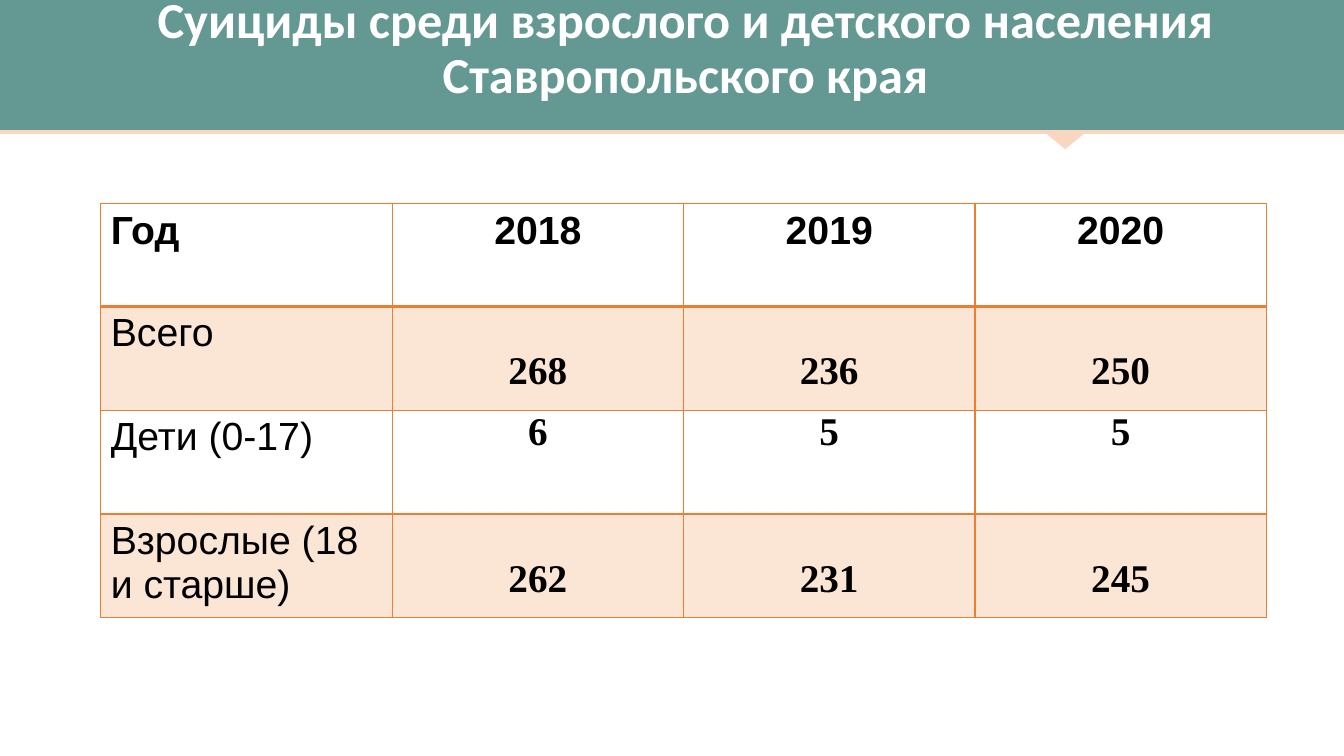
from dataclasses import dataclass

from lxml.etree import SubElement
from pptx import Presentation
from pptx.dml.color import RGBColor
from pptx.enum.shapes import MSO_CONNECTOR, MSO_SHAPE
from pptx.enum.text import MSO_ANCHOR, MSO_AUTO_SIZE, PP_ALIGN
from pptx.oxml import parse_xml
from pptx.oxml.ns import nsdecls, qn
from pptx.util import Inches, Pt


@dataclass(frozen=True)
class Theme:
    teal: str = "649892"
    peach: str = "F8D6BF"
    orange: str = "ED7D31"
    white: str = "FFFFFF"
    black: str = "000000"
    title_size: int = 36
    table_size: int = 28


theme = Theme()


def set_font(paragraph, name, size, color, bold):
    font = paragraph.font
    font.name, font.size, font.bold = name, Pt(size), bold
    font.color.rgb = RGBColor.from_string(color)


def set_borders(cell, widths):
    """Draw the left, right, top and bottom edges, with widths in points."""
    properties = cell._tc.get_or_add_tcPr()
    for position, (side, width) in enumerate(zip("LRTB", widths)):
        properties.insert(position, parse_xml(
            f'<a:ln{side} {nsdecls("a")} w="{Pt(width)}"><a:solidFill>'
            f'<a:srgbClr val="{theme.orange}"/></a:solidFill></a:ln{side}>'))


prs = Presentation()
prs.slide_width, prs.slide_height = Inches(13.33), Inches(7.5)
slide = prs.slides.add_slide(prs.slide_layouts[5])

# Header band with its rule and pointer
band = slide.shapes.add_shape(MSO_SHAPE.RECTANGLE, 0, 0, Inches(13.33), Inches(1.3))
pointer = slide.shapes.add_shape(
    MSO_SHAPE.ISOSCELES_TRIANGLE, Inches(10.37), Inches(1.32), Inches(0.39), Inches(0.16))
pointer.rotation = 180
for header_part, color in ((band, theme.teal), (pointer, theme.peach)):
    header_part.shadow.inherit = False
    header_part.fill.solid()
    header_part.fill.fore_color.rgb = RGBColor.from_string(color)
    header_part.line.fill.background()

rule = slide.shapes.add_connector(
    MSO_CONNECTOR.STRAIGHT, Inches(13.33), Inches(1.31), 0, Inches(1.31))
rule.line.color.rgb = RGBColor.from_string(theme.peach)
rule.line.width = Pt(3)
SubElement(rule._element.spPr, qn("a:effectLst"))

# Title, brought in front of the band
title = slide.shapes.title
title._element.getparent().append(title._element)
title.left, title.top = Inches(1.05), Inches(0.17)
title.width, title.height = Inches(11.5), Inches(1.2)
title_frame = title.text_frame
title_frame.text = "Суициды среди взрослого и детского населения Ставропольского края"
title_frame.word_wrap = True
title_frame.auto_size = MSO_AUTO_SIZE.NONE
title_frame.vertical_anchor = MSO_ANCHOR.MIDDLE
title_frame.margin_bottom = Inches(0.6)
heading = title_frame.paragraphs[0]
heading.alignment = PP_ALIGN.CENTER
heading.line_spacing = 0.9
set_font(heading, "Calibri", theme.title_size, theme.white, True)

# Table: label and yearly values, with the drop of the values below the row's top
rows = [
    (("Год", "2018", "2019", "2020"), 0.05),
    (("Всего", "268", "236", "250"), 0.43),
    (("Дети (0-17)", "6", "5", "5"), 0),
    (("Взрослые (18 и старше)", "262", "231", "245"), 0.43),
]
table = slide.shapes.add_table(
    len(rows), 4, Inches(1), Inches(2.02), Inches(11.56), Inches(4.12)).table
table.first_row = table.horz_banding = False

for r, (texts, value_drop) in enumerate(rows):
    table.rows[r].height = Inches(1.02 if r == 0 else 1.03)
    for c, text in enumerate(texts):
        cell = table.cell(r, c)
        cell.text = text
        is_header, is_value = r == 0, c > 0
        entry = cell.text_frame.paragraphs[0]
        entry.alignment = PP_ALIGN.CENTER if is_value else PP_ALIGN.LEFT
        set_font(entry, "Times New Roman" if is_value and not is_header else "Arial",
                 theme.table_size, theme.black, is_header or is_value)
        if is_value:
            cell.margin_top = Inches(value_drop)
            if not is_header:
                cell.margin_left = cell.margin_right = Inches(0.07)
                cell.margin_bottom = 0
        if r % 2:
            cell.fill.solid()
            cell.fill.fore_color.rgb = RGBColor.from_string(theme.orange)
            tint = cell._tc.tcPr.find(".//" + qn("a:srgbClr"))
            SubElement(tint, qn("a:alpha"), val="20000")
        else:
            cell.fill.background()
        set_borders(cell, (1, 1, 2 if r == 1 else 1, 2 if is_header else 1))

prs.save("out.pptx")
